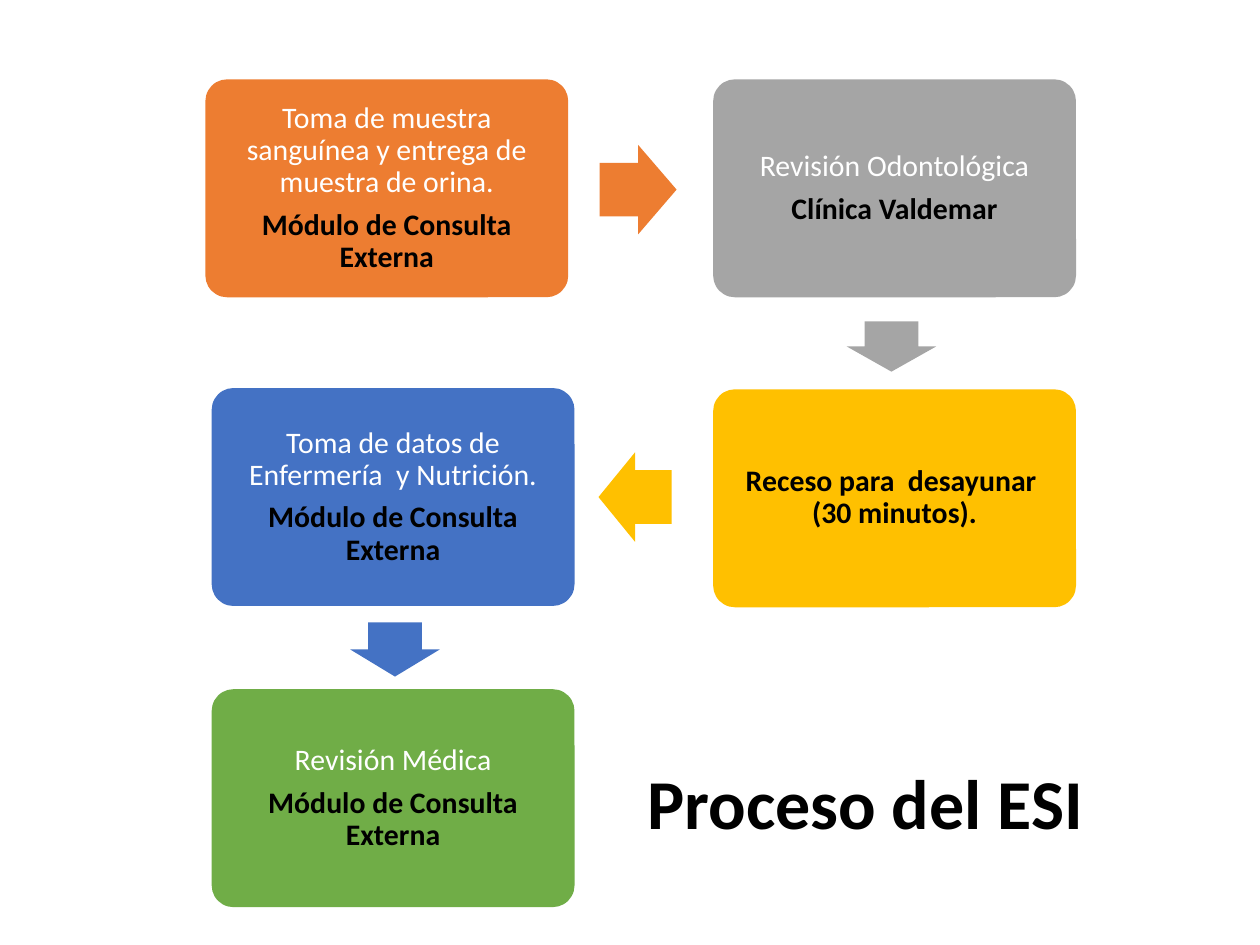
from dataclasses import dataclass

from pptx import Presentation
from pptx.dml.color import RGBColor
from pptx.enum.shapes import MSO_SHAPE
from pptx.enum.text import MSO_ANCHOR, PP_ALIGN
from pptx.util import Inches, Pt

COLORS = {
    "orange": "ED7D31",
    "gray": "A5A5A5",
    "gold": "FFC000",
    "blue": "4472C4",
    "green": "70AD47",
    "white": "FFFFFF",
    "black": "000000",
}
FONT = "Calibri"
STEP_W, STEP_H = 2.88, 1.73
MODULE = "Módulo de Consulta Externa"


@dataclass
class Step:
    left: float
    top: float
    color: str
    task: str
    place: str


@dataclass
class Arrow:
    kind: MSO_SHAPE
    left: float
    top: float
    width: float
    height: float
    color: str


STEPS = [
    Step(1.63, 0.63, "orange",
         "Toma de muestra sanguínea y entrega de muestra de orina.", MODULE),
    Step(5.66, 0.63, "gray", "Revisión Odontológica", "Clínica Valdemar"),
    Step(5.66, 3.09, "gold", "", "Receso para  desayunar  (30 minutos)."),
    Step(1.68, 3.08, "blue",
         "Toma de datos de Enfermería  y Nutrición.", MODULE),
    Step(1.68, 5.47, "green", "Revisión Médica", MODULE),
]
ARROWS = [
    Arrow(MSO_SHAPE.RIGHT_ARROW, 4.76, 1.15, 0.61, 0.71, "orange"),
    Arrow(MSO_SHAPE.DOWN_ARROW, 6.72, 2.55, 0.71, 0.4, "gray"),
    Arrow(MSO_SHAPE.LEFT_ARROW, 4.75, 3.59, 0.58, 0.71, "gold"),
    Arrow(MSO_SHAPE.DOWN_ARROW, 2.78, 4.94, 0.71, 0.43, "blue"),
]


def rgb(name: str) -> RGBColor:
    return RGBColor.from_string(COLORS[name])


def write(par, text: str, *, size: float, color: str, bold: bool = False,
          align=PP_ALIGN.LEFT, line: float = 1.0, after: float = 0) -> None:
    par.alignment = align
    par.line_spacing = line
    par.space_after = Pt(after)
    run = par.add_run()
    run.text = text
    run.font.name = FONT
    run.font.size = Pt(size)
    run.font.bold = bold
    run.font.color.rgb = rgb(color)


def add_block(slide, kind, left: float, top: float, width: float,
              height: float, color: str):
    """Add a preset shape with a plain fill, no line and no shadow."""
    shape = slide.shapes.add_shape(
        kind, Inches(left), Inches(top), Inches(width), Inches(height))
    shape.shadow.inherit = False
    shape.fill.solid()
    shape.fill.fore_color.rgb = rgb(color)
    shape.line.fill.background()
    return shape


def draw_step(slide, step: Step) -> None:
    box = add_block(slide, MSO_SHAPE.ROUNDED_RECTANGLE, step.left, step.top,
                    STEP_W, STEP_H, step.color)
    box.adjustments[0] = 0.1
    frame = box.text_frame
    frame.word_wrap = True
    frame.vertical_anchor = MSO_ANCHOR.MIDDLE
    frame.margin_left = frame.margin_right = Inches(0.07)
    frame.margin_top = frame.margin_bottom = Inches(0.07)
    style = dict(size=17, align=PP_ALIGN.CENTER, line=0.9, after=6)
    par = frame.paragraphs[0]
    if step.task:
        write(par, step.task, color="white", **style)
        par = frame.add_paragraph()
    write(par, step.place, color="black", bold=True, **style)


def draw_arrow(slide, arrow: Arrow) -> None:
    shape = add_block(slide, arrow.kind, arrow.left, arrow.top,
                      arrow.width, arrow.height, arrow.color)
    shape.adjustments[0] = 0.6
    shape.adjustments[1] = 0.5


def draw_title(slide) -> None:
    box = slide.shapes.add_textbox(
        Inches(5.04), Inches(5.98), Inches(4.41), Inches(0.77))
    box.text_frame.word_wrap = True
    write(box.text_frame.paragraphs[0], "Proceso del ESI",
          size=40, color="black", bold=True)


def main() -> None:
    deck = Presentation()
    deck.slide_width, deck.slide_height = Inches(10), Inches(7.5)
    slide = deck.slides.add_slide(deck.slide_layouts[6])
    for step in STEPS:
        draw_step(slide, step)
    for arrow in ARROWS:
        draw_arrow(slide, arrow)
    draw_title(slide)
    deck.save("out.pptx")


if __name__ == "__main__":
    main()
